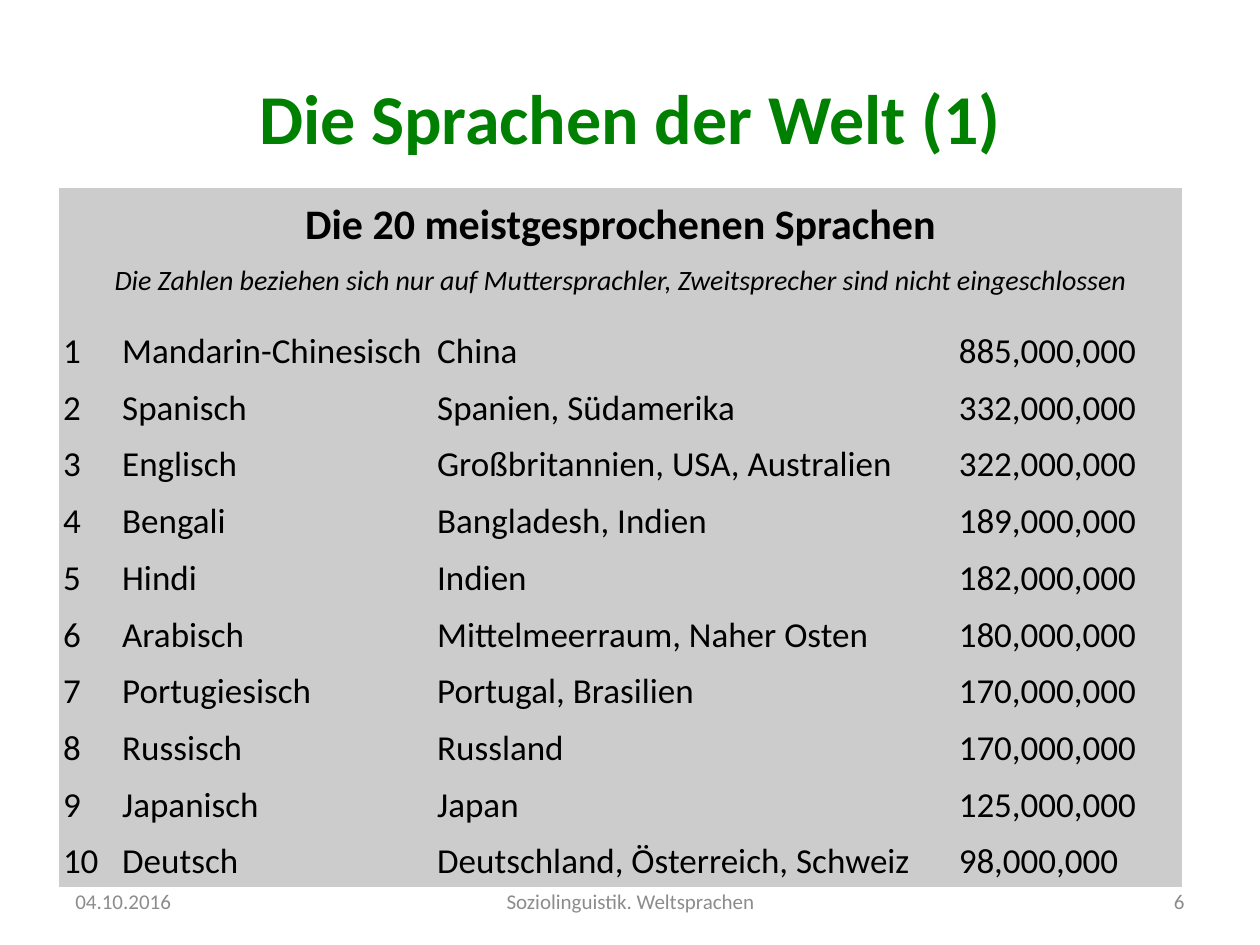
"""Build a slide that ranks the most widely spoken languages."""
import dataclasses
import typing

import pptx
import pptx.dml.color
import pptx.enum.text
import pptx.oxml.ns
import pptx.util

ALIGN = pptx.enum.text.PP_ALIGN
MIDDLE = pptx.enum.text.MSO_ANCHOR.MIDDLE
WIDTH, HEIGHT = pptx.util.Inches(10), pptx.util.Inches(7.5)
NO_GRID_STYLE = "{2D5ABB26-0587-4C30-8999-92F81FD0307C}"
COLUMN_SHARES = (0.047, 0.25, 0.414, 0.18)
HEADING_HEIGHTS = (0.53, 0.52)
ROW_HEIGHT = 0.45


@dataclasses.dataclass(frozen=True)
class Style:
    size: int
    color: str = "000000"
    align: typing.Any = ALIGN.JUSTIFY
    bold: bool = False
    italic: bool = False
    spacing: float = 1.0


@dataclasses.dataclass(frozen=True)
class Footer:
    text: str
    left: float
    width: float
    align: typing.Any


class Language(typing.NamedTuple):
    rank: str
    name: str
    region: str
    speakers: str


TITLE = Style(40, "008000", ALIGN.CENTER, bold=True)
HEADING = Style(24, align=ALIGN.CENTER, bold=True, spacing=1.15)
NOTE = Style(16, align=ALIGN.CENTER, italic=True, spacing=1.15)
BODY = Style(20, spacing=1.15)

HEADINGS = (
    ("Die 20 meistgesprochenen Sprachen", HEADING),
    ("Die Zahlen beziehen sich nur auf Muttersprachler, "
     "Zweitsprecher sind nicht eingeschlossen", NOTE),
)
LANGUAGES = (
    Language("1", "Mandarin-Chinesisch", "China", "885,000,000"),
    Language("2", "Spanisch", "Spanien, Südamerika", "332,000,000"),
    Language("3", "Englisch", "Großbritannien, USA, Australien", "322,000,000"),
    Language("4", "Bengali", "Bangladesh, Indien", "189,000,000"),
    Language("5", "Hindi", "Indien", "182,000,000"),
    Language("6", "Arabisch", "Mittelmeerraum, Naher Osten", "180,000,000"),
    Language("7", "Portugiesisch", "Portugal, Brasilien", "170,000,000"),
    Language("8", "Russisch", "Russland", "170,000,000"),
    Language("9", "Japanisch", "Japan", "125,000,000"),
    Language("10", "Deutsch", "Deutschland, Österreich, Schweiz", "98,000,000"),
)
FOOTERS = (
    Footer("04.10.2016", 0.05, 0.233, ALIGN.LEFT),
    Footer("Soziolinguistik. Weltsprachen", 0.342, 0.317, ALIGN.CENTER),
    Footer("6", 0.717, 0.233, ALIGN.RIGHT),
)


def rgb(color: str) -> pptx.dml.color.RGBColor:
    return pptx.dml.color.RGBColor.from_string(color)


def write(tf, text: str, style: Style) -> None:
    tf.text = text
    p = tf.paragraphs[0]
    p.alignment, p.line_spacing = style.align, style.spacing
    p.font.name, p.font.size = "Calibri", pptx.util.Pt(style.size)
    p.font.bold, p.font.italic = style.bold, style.italic
    p.font.color.rgb = rgb(style.color)


def add_title(slide, text: str) -> None:
    sp = slide.shapes.title
    sp.left, sp.top = int(0.05 * WIDTH), int(0.04 * HEIGHT)
    sp.width, sp.height = int(0.9 * WIDTH), pptx.util.Inches(1.25)
    sp.text_frame.vertical_anchor = MIDDLE
    write(sp.text_frame, text, TITLE)


def add_footer(slide, footer: Footer) -> None:
    sp = slide.shapes.add_textbox(int(footer.left * WIDTH), pptx.util.Inches(6.95),
                                  int(footer.width * WIDTH), pptx.util.Inches(0.4))
    tf = sp.text_frame
    tf.word_wrap, tf.vertical_anchor = True, MIDDLE
    write(tf, footer.text, Style(12, "8C8C8C", footer.align))


def fill_cell(cell, text: str, style: Style) -> None:
    inset = pptx.util.Inches(0.03)
    cell.margin_left = cell.margin_right = inset
    cell.margin_top = cell.margin_bottom = inset
    cell.fill.solid()
    cell.fill.fore_color.rgb = rgb("CCCCCC")
    write(cell.text_frame, text, style)


def add_language_table(slide) -> None:
    heights = HEADING_HEIGHTS + (ROW_HEIGHT,) * len(LANGUAGES)
    frame = slide.shapes.add_table(
        len(heights), len(COLUMN_SHARES), pptx.util.Inches(0.47), pptx.util.Inches(1.49),
        int(sum(COLUMN_SHARES) * WIDTH), pptx.util.Inches(sum(heights)))
    table = frame.table
    table.first_row = table.horz_banding = False
    frame._element.find(".//" + pptx.oxml.ns.qn("a:tableStyleId")).text = NO_GRID_STYLE
    for column, share in zip(table.columns, COLUMN_SHARES):
        column.width = int(share * WIDTH)
    for row, height in zip(table.rows, heights):
        row.height = pptx.util.Inches(height)
    for i, (text, style) in enumerate(HEADINGS):
        table.cell(i, 0).merge(table.cell(i, len(COLUMN_SHARES) - 1))
        fill_cell(table.cell(i, 0), text, style)
    for i, language in enumerate(LANGUAGES, len(HEADINGS)):
        for j, text in enumerate(language):
            fill_cell(table.cell(i, j), text, BODY)


def main() -> None:
    prs = pptx.Presentation()
    prs.slide_width, prs.slide_height = WIDTH, HEIGHT
    slide = prs.slides.add_slide(prs.slide_layouts.get_by_name("Title Only"))
    add_title(slide, "Die Sprachen der Welt (1)")
    for footer in FOOTERS:
        add_footer(slide, footer)
    add_language_table(slide)
    prs.save("out.pptx")


if __name__ == "__main__":
    main()
